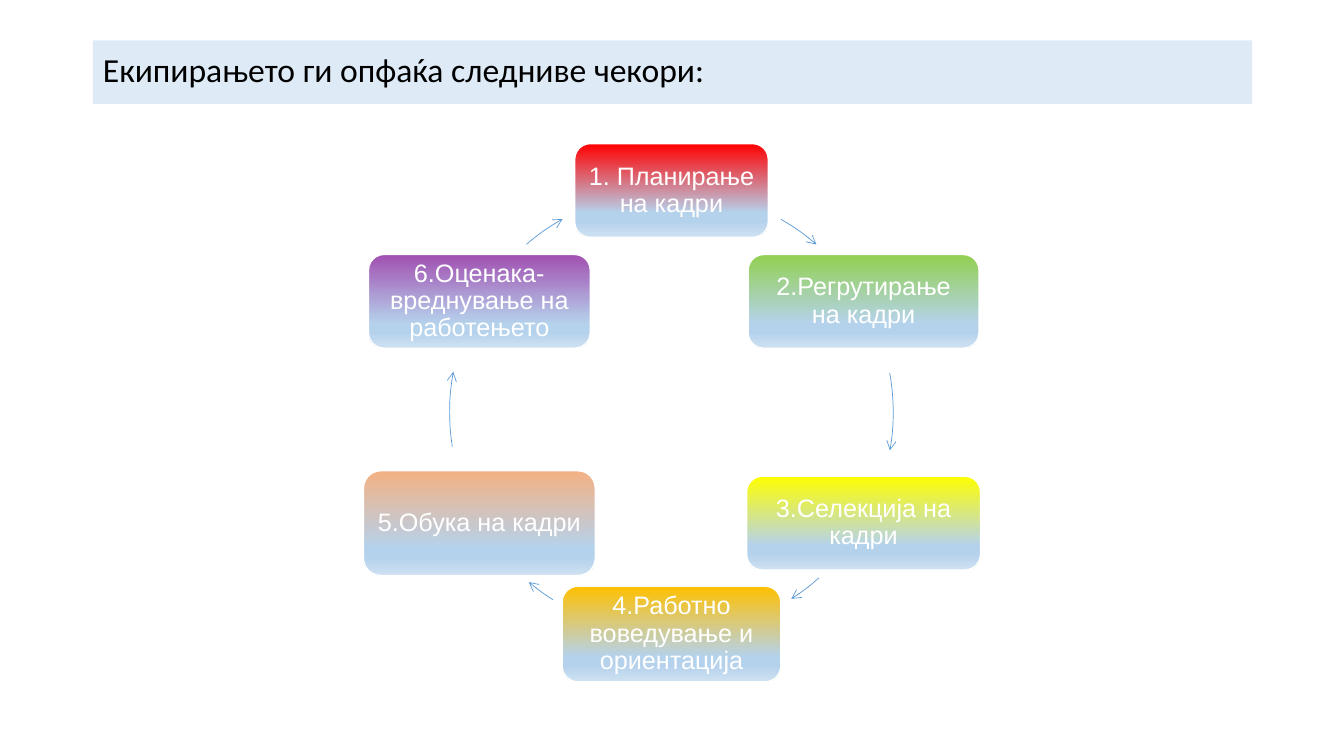
from math import cos, radians, sin

from lxml.etree import SubElement as add_child
from pptx import Presentation
from pptx.dml.color import RGBColor as Rgb
from pptx.enum.shapes import MSO_SHAPE as Preset
from pptx.enum.text import MSO_ANCHOR as Anchor, MSO_AUTO_SIZE as AutoSize, PP_ALIGN as Align
from pptx.oxml.ns import qn
from pptx.util import Inches, Pt

WIDTH, HEIGHT = 13.33, 7.5
COLORS = {
    "banner": "DEEBF7", "title": "000000", "label": "FFFFFF", "arrow": "5B9BD5",
    "haze": "B5D2EC", "mist": "CEE1F2",
    "red": "FF0000", "green": "92D050", "yellow": "FFFF00",
    "gold": "FFC000", "peach": "F4B183", "purple": "A14FB1",
}
# The ring, as shares of the slide's size
CENTER_X, CENTER_Y = 6.66 / WIDTH, 4.09 / HEIGHT
RADIUS_X, RADIUS_Y = 2.2 / WIDTH, 2.2 / HEIGHT

# Label, colour, width and height in inches, start and end angle of the next arrow
STEPS = [
    ("1. Планирање на кадри", "red", 1.92, 0.93, 299.6, 310.8),
    ("2.Регрутирање на кадри", "green", 2.29, 0.93, 349.8, 9.9),
    ("3.Селекција на кадри", "yellow", 2.32, 0.93, 48.3, 57.3),
    ("4.Работно воведување и ориентација", "gold", 2.17, 0.95, 122.3, 130),
    ("5.Обука на кадри", "peach", 2.3, 1.04, 171.1, 190.5),
    ("6.Оценака-вреднување на работењето", "purple", 2.2, 0.93, 229.2, 240.6),
]


def apply(target, values):
    for name, value in values.items():
        setattr(target, name, value)


class CyclePage:
    def __init__(self, deck):
        self.deck = deck
        self.page = deck.slides.add_slide(deck.slide_layouts[5])

    def place(self, left, top, width, height):
        """Turn shares of the slide's size into lengths."""
        across, down = self.deck.slide_width, self.deck.slide_height
        return {"left": int(left * across), "top": int(top * down),
                "width": int(width * across), "height": int(height * down)}

    def shape(self, preset, left, top, width, height):
        box = self.page.shapes.add_shape(preset, **self.place(left, top, width, height))
        box.shadow.inherit = False
        return box

    def label(self, box, text, size, font, color, align, inset=None):
        frame = box.text_frame
        apply(frame, {"word_wrap": True, "auto_size": AutoSize.NONE,
                      "vertical_anchor": Anchor.MIDDLE})
        if inset is not None:
            sides = ("margin_left", "margin_top", "margin_right", "margin_bottom")
            apply(frame, dict.fromkeys(sides, Inches(inset)))
        para = frame.paragraphs[0]
        apply(para, {"alignment": align, "line_spacing": 0.9})
        span = para.add_run()
        span.text = text
        apply(span.font, {"size": Pt(size), "name": font})
        span.font.color.rgb = Rgb.from_string(COLORS[color])

    def outline(self, box, color, width):
        box.line.color.rgb = Rgb.from_string(COLORS[color])
        box.line.width = Pt(width)

    def title(self, text, left, top, width, height):
        banner = self.page.shapes.title
        apply(banner, self.place(left, top, width, height))
        banner.fill.solid()
        banner.fill.fore_color.rgb = Rgb.from_string(COLORS["banner"])
        self.label(banner, text, 24, "Calibri", "title", Align.LEFT)

    def step(self, text, color, x, y, width, height):
        box = self.shape(Preset.ROUNDED_RECTANGLE, x - width / 2, y - height / 2, width, height)
        self.fade(box, [(0, color), (74, "haze"), (83, "haze"), (100, "mist")])
        self.outline(box, "label", 1)
        self.label(box, text, 18, "Arial", "label", Align.CENTER, inset=0.07)

    def fade(self, box, stops):
        """Fill from top to bottom with the given stops."""
        box.fill.gradient()
        box.fill.gradient_angle = 270
        stop_list = next(box.element.spPr.iter(qn("a:gsLst")))
        for stop in list(stop_list):
            stop_list.remove(stop)
        for share, color in stops:
            stop = add_child(stop_list, qn("a:gs"), pos=str(share * 1000))
            add_child(stop, qn("a:srgbClr"), val=COLORS[color])

    def arc_arrow(self, start, end):
        """Draw a clockwise arrow along the ring, with angles in degrees."""
        arc = self.shape(Preset.ARC, CENTER_X - RADIUS_X, CENTER_Y - RADIUS_Y,
                         2 * RADIUS_X, 2 * RADIUS_Y)
        for index, angle in enumerate((start, end)):
            arc.adjustments[index] = angle * 0.6  # 60000ths of a degree, per 100000
        arc.fill.background()
        self.outline(arc, "arrow", 0.5)
        add_child(arc.element.spPr.find(qn("a:ln")), qn("a:tailEnd"), type="arrow")


def main():
    deck = Presentation()
    apply(deck, {"slide_width": Inches(WIDTH), "slide_height": Inches(HEIGHT)})
    cycle = CyclePage(deck)

    # Heading
    cycle.title("Екипирањето ги опфаќа следниве чекори:",
                0.92 / WIDTH, 0.4 / HEIGHT, 11.5 / WIDTH, 0.63 / HEIGHT)

    # Steps at equal angles around the ring, each followed by its arrow
    for index, (text, color, width, height, start, end) in enumerate(STEPS):
        angle = radians(index * 360 / len(STEPS) - 90)
        cycle.step(text, color, CENTER_X + RADIUS_X * cos(angle),
                   CENTER_Y + RADIUS_Y * sin(angle), width / WIDTH, height / HEIGHT)
        cycle.arc_arrow(start, end)

    deck.save("out.pptx")


if __name__ == "__main__":
    main()
